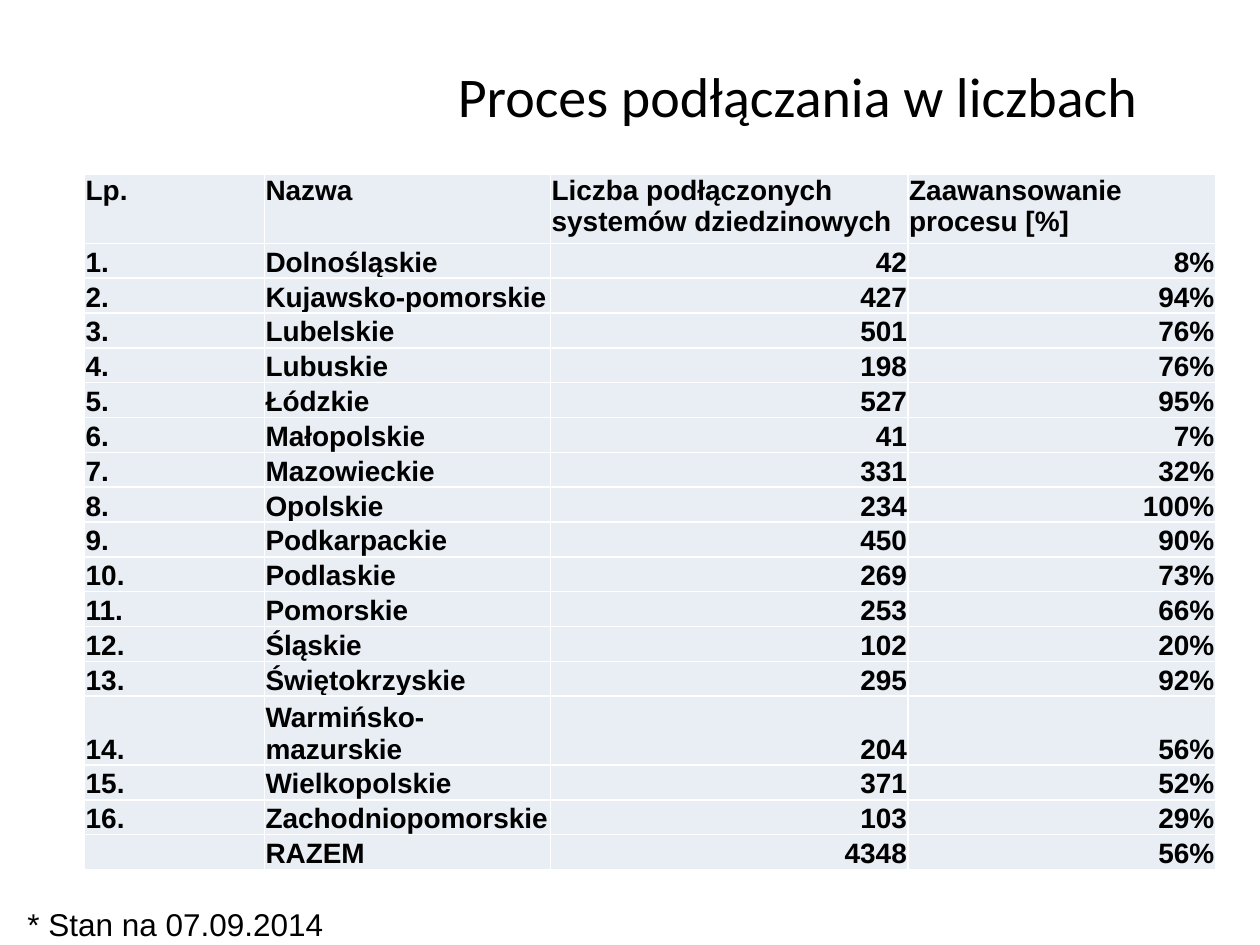
import pptx
import pptx.dml.color
import pptx.enum.text
import pptx.oxml
import pptx.oxml.ns
import pptx.util

Pt = pptx.util.Pt
ALIGN = pptx.enum.text.PP_ALIGN
ANCHOR = pptx.enum.text.MSO_ANCHOR


def color(hex_code):
    return pptx.dml.color.RGBColor.from_string(hex_code)


class SlideBuilder:
    ink = "000000"
    cell_fill = "E9EDF4"
    border = "FFFFFF"
    title_font = "Calibri"
    body_font = "Arial"

    def __init__(self, slide):
        self.slide = slide

    def style(self, paragraph, font, size, align, bold=False):
        paragraph.alignment = align
        paragraph.font.name = font
        paragraph.font.size = Pt(size)
        paragraph.font.bold = bold
        paragraph.font.color.rgb = color(self.ink)

    def text(self, box, wording, font, size, align=ALIGN.LEFT,
             anchor=ANCHOR.TOP, wrap=True, left_inset=7.2):
        frame = self.slide.shapes.add_textbox(*map(Pt, box)).text_frame
        frame.word_wrap = wrap
        frame.vertical_anchor = anchor
        frame.margin_left = Pt(left_inset)
        frame.text = wording
        self.style(frame.paragraphs[0], font, size, align)
        return frame

    def cell(self, cell, wording, align, anchor):
        cell.text = wording
        cell.vertical_anchor = anchor
        cell.margin_left = cell.margin_right = cell.margin_top = Pt(0.7)
        cell.margin_bottom = 0
        for paragraph in cell.text_frame.paragraphs:
            self.style(paragraph, self.body_font, 16, align, bold=True)
        # Borders come before the fill in the cell properties
        properties = cell._tc.get_or_add_tcPr()
        for side in ("lnL", "lnR", "lnT", "lnB"):
            properties.append(pptx.oxml.parse_xml(
                f'<a:{side} {pptx.oxml.ns.nsdecls("a")} w="{Pt(1)}"><a:solidFill>'
                f'<a:srgbClr val="{self.border}"/></a:solidFill></a:{side}>'))
        cell.fill.solid()
        cell.fill.fore_color.rgb = color(self.cell_fill)

    def table(self, left, top, widths, heights, rows):
        table = self.slide.shapes.add_table(
            len(rows), len(widths), Pt(left), Pt(top),
            Pt(sum(widths)), Pt(sum(heights))).table
        table.first_row = table.horz_banding = False
        for column, width in zip(table.columns, widths):
            column.width = Pt(width)
        for row, height in zip(table.rows, heights):
            row.height = Pt(height)
        for r, row in enumerate(rows):
            for c, wording in enumerate(row):
                align = ALIGN.RIGHT if r and c >= 2 else ALIGN.LEFT
                anchor = ANCHOR.BOTTOM if r else ANCHOR.TOP
                self.cell(table.cell(r, c), wording, align, anchor)


HEADER = ("Lp.", "Nazwa", "Liczba podłączonych systemów dziedzinowych",
          "Zaawansowanie\nprocesu [%]")
REGIONS = [
    ("Dolnośląskie", 42, 8),
    ("Kujawsko-pomorskie", 427, 94),
    ("Lubelskie", 501, 76),
    ("Lubuskie", 198, 76),
    ("Łódzkie", 527, 95),
    ("Małopolskie", 41, 7),
    ("Mazowieckie", 331, 32),
    ("Opolskie", 234, 100),
    ("Podkarpackie", 450, 90),
    ("Podlaskie", 269, 73),
    ("Pomorskie", 253, 66),
    ("Śląskie", 102, 20),
    ("Świętokrzyskie", 295, 92),
    ("Warmińsko-mazurskie", 204, 56),
    ("Wielkopolskie", 371, 52),
    ("Zachodniopomorskie", 103, 29),
]
TOTAL = ("", "RAZEM", "4348", "56%")


def main():
    presentation = pptx.Presentation()
    presentation.slide_width = Pt(720)
    presentation.slide_height = Pt(540)
    builder = SlideBuilder(
        presentation.slides.add_slide(presentation.slide_layouts[6]))

    # Title
    builder.text((184.3, 9.4, 521.3, 90), "Proces podłączania w liczbach",
                 builder.title_font, 32, ALIGN.CENTER, ANCHOR.MIDDLE,
                 left_inset=29)

    # Date of the figures
    builder.text((8.6, 513.4, 185, 28.8), "* Stan na 07.09.2014",
                 builder.body_font, 18, wrap=False)

    # Regions; the header and the one wrapped name take two lines
    rows = [HEADER]
    rows += [(f"{number}.", name, str(systems), f"{progress}%")
             for number, (name, systems, progress) in enumerate(REGIONS, 1)]
    rows.append(TOTAL)
    heights = [39.4 if row is HEADER or row[1] == "Warmińsko-mazurskie" else 19.8
               for row in rows]
    builder.table(48.3, 99.7, (102.8, 163.5, 204.3, 175.7), heights, rows)

    presentation.save("out.pptx")


if __name__ == "__main__":
    main()
